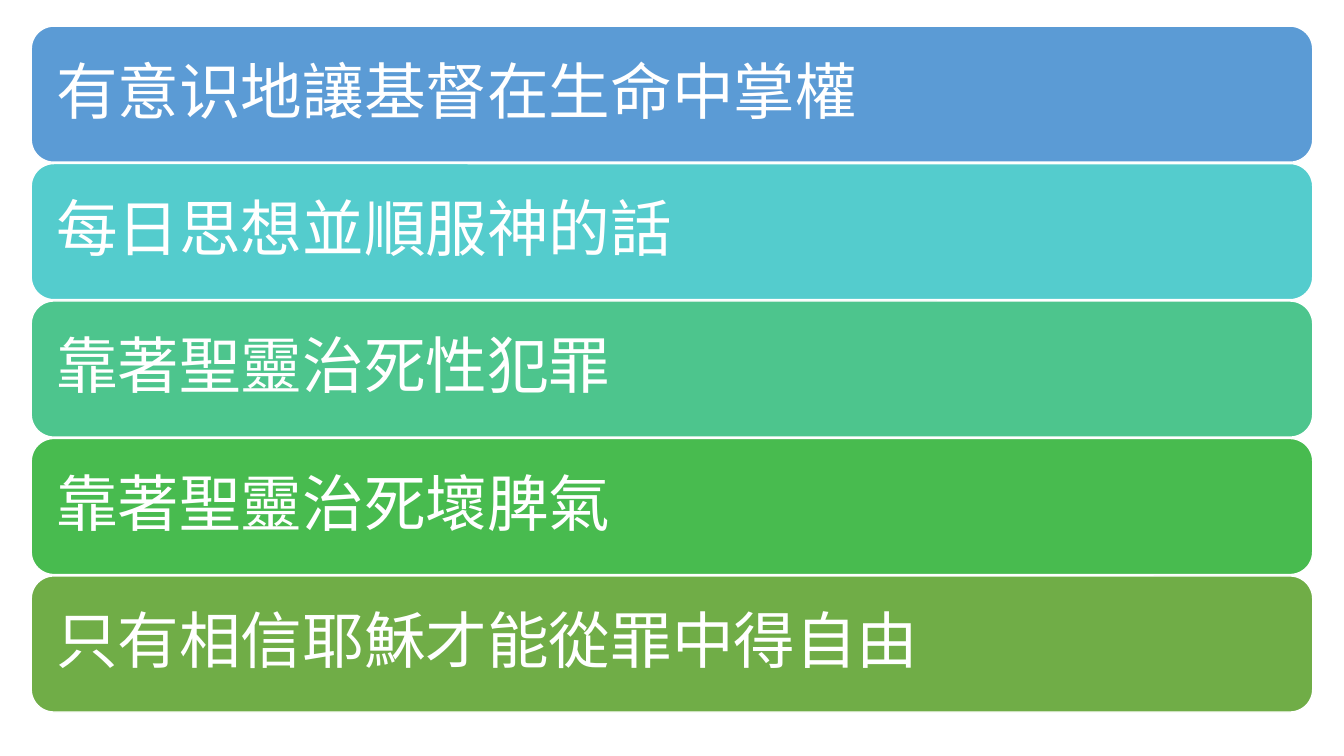
from dataclasses import dataclass

from lxml.etree import SubElement
from pptx import Presentation
from pptx.dml.color import RGBColor
from pptx.enum.shapes import MSO_SHAPE
from pptx.enum.text import MSO_ANCHOR, PP_ALIGN
from pptx.oxml.ns import qn
from pptx.slide import Slide
from pptx.util import Inches, Pt

SLIDE_WIDTH, SLIDE_HEIGHT = Inches(13.33), Inches(7.5)
COLUMN, ROW = SLIDE_WIDTH / 43, SLIDE_HEIGHT / 550
LEFT_COLUMN, BAR_COLUMNS = 1, 41
TOP_ROW, BAR_ROWS, PITCH_ROWS = 19, 99, 100

TYPEFACE = "Noto Sans CJK SC"
WHITE = "FFFFFF"
INSET = Inches(0.18)
FRAME_FORMAT = {
    "word_wrap": True,
    "vertical_anchor": MSO_ANCHOR.MIDDLE,
    "margin_left": INSET,
    "margin_right": INSET,
    "margin_top": INSET,
    "margin_bottom": INSET,
}
PARAGRAPH_FORMAT = {"alignment": PP_ALIGN.LEFT, "line_spacing": 0.9}
FONT_FORMAT = {"name": TYPEFACE, "size": Pt(44)}


@dataclass(frozen=True)
class Practice:
    wording: str
    fill: str


PRACTICES = [
    Practice("有意识地讓基督在生命中掌權", "5B9BD5"),
    Practice("每日思想並順服神的話", "54CCCD"),
    Practice("靠著聖靈治死性犯罪", "4DC58D"),
    Practice("靠著聖靈治死壞脾氣", "48BB4F"),
    Practice("只有相信耶穌才能從罪中得自由", "70AD47"),
]


def paint(color_format, color: str) -> None:
    color_format.rgb = RGBColor.from_string(color)


def apply_format(target, values: dict) -> None:
    for attribute, value in values.items():
        setattr(target, attribute, value)


def draw_practice(slide: Slide, practice: Practice, index: int) -> None:
    bar = slide.shapes.add_shape(
        MSO_SHAPE.ROUNDED_RECTANGLE,
        round(LEFT_COLUMN * COLUMN),
        round((TOP_ROW + index * PITCH_ROWS) * ROW),
        round(BAR_COLUMNS * COLUMN),
        round(BAR_ROWS * ROW),
    )
    bar.shadow.inherit = False
    bar.fill.solid()
    paint(bar.fill.fore_color, practice.fill)
    paint(bar.line.color, WHITE)
    bar.line.width = Pt(1)

    apply_format(bar.text_frame, FRAME_FORMAT)
    paragraph = bar.text_frame.paragraphs[0]
    apply_format(paragraph, PARAGRAPH_FORMAT)
    wording = paragraph.add_run()
    wording.text = practice.wording
    apply_format(wording.font, FONT_FORMAT)
    paint(wording.font.color, WHITE)
    SubElement(wording._r.get_or_add_rPr(), qn("a:ea"), typeface=TYPEFACE)


def main() -> None:
    presentation = Presentation()
    apply_format(presentation, {"slide_width": SLIDE_WIDTH, "slide_height": SLIDE_HEIGHT})
    slide = presentation.slides.add_slide(presentation.slide_layouts[6])
    for index, practice in enumerate(PRACTICES):
        draw_practice(slide, practice, index)
    presentation.save("out.pptx")


if __name__ == "__main__":
    main()
